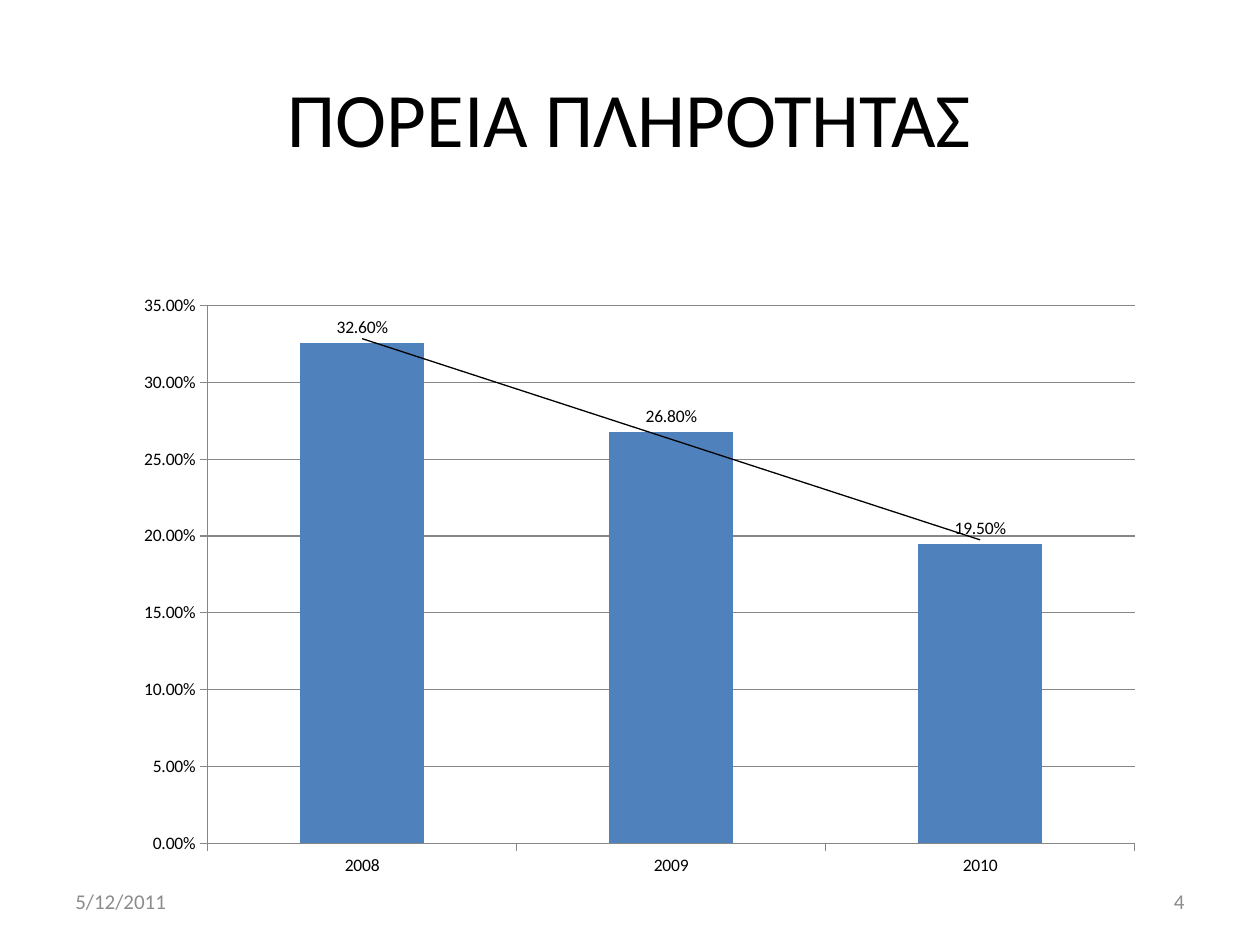
from lxml import etree
from pptx import Presentation
from pptx.chart.data import CategoryChartData
from pptx.dml.color import RGBColor
from pptx.enum import chart as ch, text as tx
from pptx.oxml.ns import qn
from pptx.util import Cm, Pt

# Content
TITLE = "ΠΟΡΕΙΑ ΠΛΗΡΟΤΗΤΑΣ"
RATES = [("2008", 0.326), ("2009", 0.268), ("2010", 0.195)]
DATE, PAGE = "5/12/2011", "4"
COLORS = {"ink": "000000", "bar": "4F81BD", "rule": "868686", "foot": "8C8C8C"}
FONT = "Calibri"
WIDE, HIGH, EDGE = 25.4, 19.05, 1.27


def tint(name):
    return RGBColor.from_string(COLORS[name])


def style(font, size, color):
    font.name, font.size = FONT, Pt(size)
    font.color.rgb = tint(color)


def write(shape, words, size, color, align):
    frame = shape.text_frame
    frame.word_wrap = True
    frame.vertical_anchor = tx.MSO_ANCHOR.MIDDLE
    para = frame.paragraphs[0]
    para.alignment = align
    run = para.add_run()
    run.text = words
    style(run.font, size, color)


def rule(line, color, width):
    line.color.rgb = tint(color)
    line.width = Pt(width)


deck = Presentation()
deck.slide_width, deck.slide_height = Cm(WIDE), Cm(HIGH)
slide = deck.slides.add_slide(deck.slide_layouts[5])

# Title
title = slide.shapes.title
title.left, title.top = Cm(EDGE), Cm(0.76)
title.width, title.height = Cm(WIDE - 2 * EDGE), Cm(3.18)
write(title, TITLE, 44, "ink", tx.PP_ALIGN.CENTER)

# Column chart
data = CategoryChartData(number_format="0.00%")
data.categories = [year for year, rate in RATES]
data.add_series("Series 1", [rate for year, rate in RATES])
chart = slide.shapes.add_chart(
    ch.XL_CHART_TYPE.COLUMN_CLUSTERED,
    Cm(2.49), Cm(5.72), Cm(20.8), Cm(12.17), data).chart
chart.has_title = chart.has_legend = False
style(chart.font, 10, "ink")

plot = chart.plots[0]
plot.gap_width = 150
plot.vary_by_categories = False
bars = plot.series[0]
bars.format.fill.solid()
bars.format.fill.fore_color.rgb = tint("bar")
labels = bars.data_labels
labels.show_value = True
labels.number_format, labels.number_format_is_linked = "0.00%", False
labels.position = ch.XL_LABEL_POSITION.OUTSIDE_END
style(labels.font, 10, "ink")

# Axes
for axis in (chart.category_axis, chart.value_axis):
    axis.major_tick_mark = ch.XL_TICK_MARK.OUTSIDE
    axis.minor_tick_mark = ch.XL_TICK_MARK.NONE
    rule(axis.format.line, "rule", 0.75)
    style(axis.tick_labels.font, 10, "ink")
scale = chart.value_axis
scale.minimum_scale, scale.maximum_scale, scale.major_unit = 0, 0.35, 0.05
scale.tick_labels.number_format = "0.00%"
scale.tick_labels.number_format_is_linked = False
scale.has_major_gridlines = True
rule(scale.major_gridlines.format.line, "rule", 0.75)

# Linear trend line
NS = ('xmlns:c="http://schemas.openxmlformats.org/drawingml/2006/chart" '
      'xmlns:a="http://schemas.openxmlformats.org/drawingml/2006/main"')
trend = etree.fromstring(
    f'<c:trendline {NS}><c:spPr><a:ln w="9525"><a:solidFill>'
    f'<a:srgbClr val="{COLORS["ink"]}"/></a:solidFill></a:ln></c:spPr>'
    '<c:trendlineType val="linear"/><c:dispRSqr val="0"/><c:dispEq val="0"/>'
    '</c:trendline>')
bars._element.find(qn("c:cat")).addprevious(trend)

# Footer: date at the left margin, page number at the right
FOOT = 5.93
for words, left, align in (
        (DATE, EDGE, tx.PP_ALIGN.LEFT),
        (PAGE, WIDE - EDGE - FOOT, tx.PP_ALIGN.RIGHT)):
    box = slide.shapes.add_textbox(Cm(left), Cm(17.66), Cm(FOOT), Cm(1.01))
    write(box, words, 12, "foot", align)

deck.save("out.pptx")
